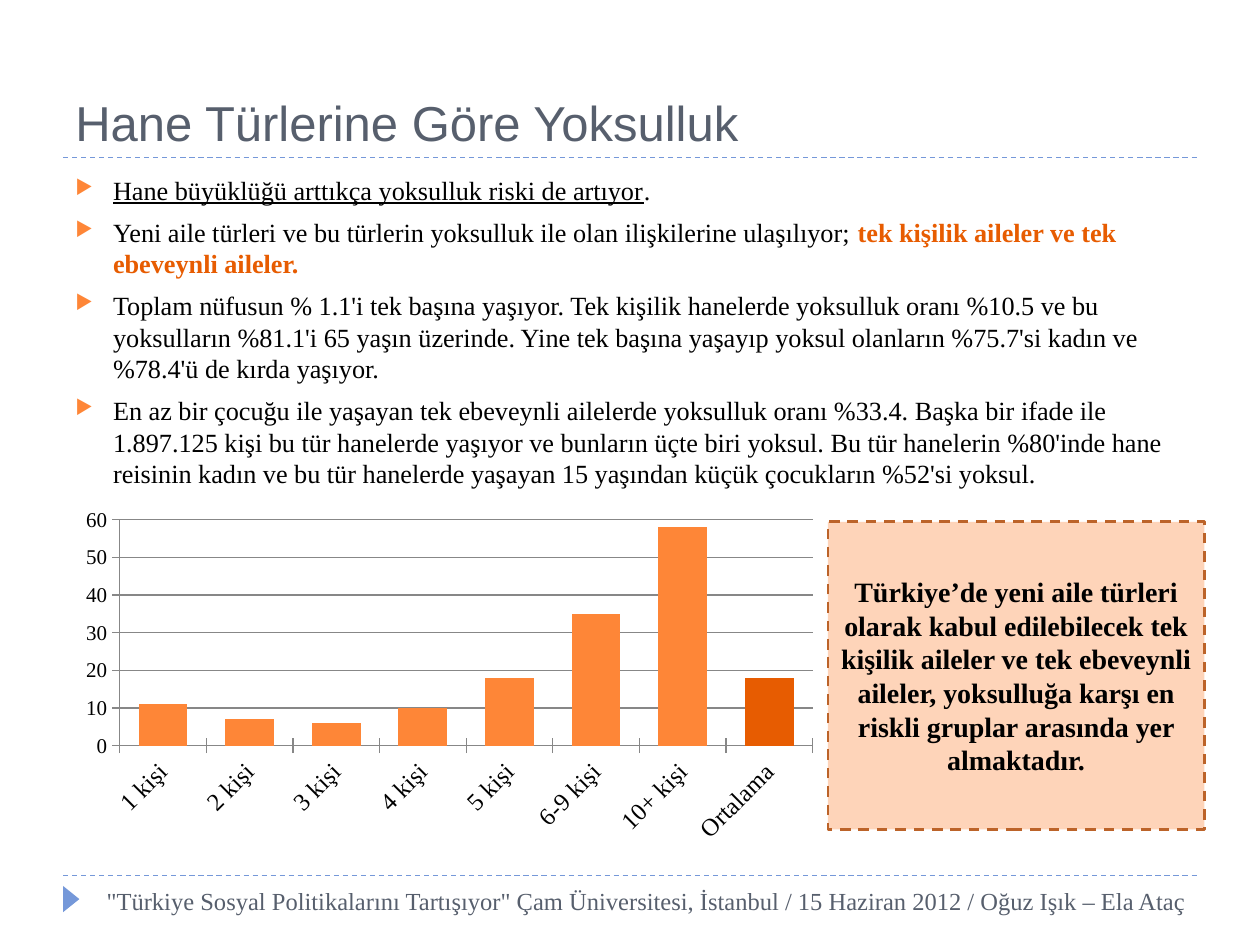
from dataclasses import dataclass
from typing import Any, NamedTuple

from lxml.etree import SubElement
from pptx import Presentation
from pptx.chart.data import CategoryChartData
from pptx.dml.color import RGBColor
from pptx.enum.chart import XL_CHART_TYPE as ChartType, XL_TICK_MARK as TickMark
from pptx.enum.dml import MSO_LINE
from pptx.enum.shapes import MSO_CONNECTOR as Connector, MSO_SHAPE as Preset
from pptx.enum.text import MSO_ANCHOR as Anchor, PP_ALIGN as Align
from pptx.oxml.ns import qn
from pptx.util import Cm, Pt


@dataclass(frozen=True)
class Theme:
    blue: str = "7598D9"
    slate: str = "575F6D"
    orange: str = "FE8637"
    dark_orange: str = "E75C01"
    brown: str = "BC6329"
    grid: str = "878787"
    ink: str = "000000"
    serif: str = "Times New Roman"
    sans: str = "Arial"
    title_size: float = 28
    body_size: float = 15
    callout_size: float = 16
    label_size: float = 14
    value_size: float = 12


class Box(NamedTuple):
    left: float
    top: float
    width: float
    height: float

    def lengths(self) -> list:
        return [Cm(value) for value in self]


class Span(NamedTuple):
    text: str
    style: dict = {}


THEME = Theme()
RULE_HEIGHTS = (3.18, 17.65)
SERIF = {"name": THEME.serif, "color": THEME.ink}
BODY = SERIF | {"size": Pt(THEME.body_size)}

BULLETS = [
    [Span("Hane büyüklüğü arttıkça yoksulluk riski de artıyor", {"underline": True}), Span(".")],
    [Span("Yeni aile türleri ve bu türlerin yoksulluk ile olan ilişkilerine ulaşılıyor; "),
     Span("tek kişilik aileler ve tek ebeveynli aileler.",
          {"bold": True, "color": THEME.dark_orange})],
    [Span("Toplam nüfusun % 1.1'i tek başına yaşıyor. Tek kişilik hanelerde yoksulluk oranı "
          "%10.5 ve bu yoksulların %81.1'i 65 yaşın üzerinde. Yine tek başına yaşayıp yoksul "
          "olanların %75.7'si kadın ve %78.4'ü de kırda yaşıyor.")],
    [Span("En az bir çocuğu ile yaşayan tek ebeveynli ailelerde yoksulluk oranı %33.4. Başka "
          "bir ifade ile 1.897.125 kişi bu tür hanelerde yaşıyor ve bunların üçte biri yoksul. "
          "Bu tür hanelerin %80'inde hane reisinin kadın ve bu tür hanelerde yaşayan 15 "
          "yaşından küçük çocukların %52'si yoksul.")],
]
CALLOUT = ("Türkiye’de yeni aile türleri olarak kabul edilebilecek tek kişilik aileler ve tek "
           "ebeveynli aileler, yoksulluğa karşı en riskli gruplar arasında yer almaktadır.")
FOOTER = ('"Türkiye Sosyal Politikalarını Tartışıyor" Çam Üniversitesi, İstanbul / '
          "15 Haziran 2012 / Oğuz Işık – Ela Ataç")
POVERTY_RATES = {"1 kişi": 11, "2 kişi": 7, "3 kişi": 6, "4 kişi": 10, "5 kişi": 18,
                 "6-9 kişi": 35, "10+ kişi": 58, "Ortalama": 18}


def assign(target: Any, values: dict) -> None:
    for name, value in values.items():
        setattr(target, name, value)


def style_font(font: Any, style: dict) -> None:
    assign(font, {name: value for name, value in style.items() if name != "color"})
    if "color" in style:
        font.color.rgb = RGBColor.from_string(style["color"])


def style_line(line: Any, color: str, width: float, dash: Any = None) -> None:
    line.color.rgb = RGBColor.from_string(color)
    assign(line, {"width": Pt(width), "dash_style": dash})


def paint(fill: Any, color: str) -> None:
    fill.solid()
    fill.fore_color.rgb = RGBColor.from_string(color)


def write(paragraph: Any, spans: list[Span], base: dict) -> None:
    for span in spans:
        run = paragraph.add_run()
        run.text = span.text
        style_font(run.font, base | span.style)


def add_text(slide: Any, box: Box, anchor: Any = Anchor.TOP) -> Any:
    frame = slide.shapes.add_textbox(*box.lengths()).text_frame
    assign(frame, {"word_wrap": True, "vertical_anchor": anchor})
    return frame


def add_rule(slide: Any, height: float) -> None:
    rule = slide.shapes.add_connector(
        Connector.STRAIGHT, Cm(1.27), Cm(height), Cm(24.13), Cm(height))
    style_line(rule.line, THEME.blue, 0.75, MSO_LINE.DASH)
    SubElement(rule._element.spPr, qn("a:effectLst"))


def add_shape(slide: Any, preset: Any, box: Box, color: str) -> Any:
    shape = slide.shapes.add_shape(preset, *box.lengths())
    shape.shadow.inherit = False
    paint(shape.fill, color)
    return shape


def add_bullet(paragraph: Any) -> None:
    paragraph.space_before = Pt(6)
    properties = paragraph._p.get_or_add_pPr()
    properties.set("marL", str(Cm(0.76)))
    properties.set("indent", str(Cm(-0.76)))
    color = SubElement(properties, qn("a:buClr"))
    SubElement(color, qn("a:srgbClr"), val=THEME.orange)
    SubElement(properties, qn("a:buSzPct"), val="76000")
    SubElement(properties, qn("a:buChar"), char="▶")


def add_bullets(slide: Any) -> None:
    frame = add_text(slide, Box(1.27, 3.38, 22.86, 7.14))
    for index, spans in enumerate(BULLETS):
        paragraph = frame.add_paragraph() if index else frame.paragraphs[0]
        add_bullet(paragraph)
        write(paragraph, spans, BODY)


def fix_plot_area(chart: Any, layout: dict[str, float]) -> None:
    """Place the inner plot area by fractions of the chart."""
    plot_area = chart._chartSpace.chart.plotArea
    holder = plot_area.find(qn("c:layout"))
    if holder is None:
        holder = plot_area.makeelement(qn("c:layout"))
        plot_area.insert(0, holder)
    manual = SubElement(holder, qn("c:manualLayout"))
    settings = {"layoutTarget": "inner", "xMode": "edge", "yMode": "edge"} | layout
    for name, value in settings.items():
        SubElement(manual, qn(f"c:{name}"), val=str(value))


def add_poverty_chart(slide: Any) -> None:
    data = CategoryChartData(number_format="0")
    data.categories = list(POVERTY_RATES)
    data.add_series("Yoksulluk oranı", list(POVERTY_RATES.values()))
    chart = slide.shapes.add_chart(
        ChartType.COLUMN_CLUSTERED, *Box(1.5, 10.13, 15.19, 7.01).lengths(), data).chart
    assign(chart, {"has_legend": False, "has_title": False})
    style_font(chart.font, SERIF | {"size": Pt(10)})
    fix_plot_area(chart, {"x": 0.06, "y": 0.05, "w": 0.92, "h": 0.65})

    plot = chart.plots[0]
    assign(plot, {"gap_width": 78, "vary_by_categories": False})
    paint(plot.series[0].format.fill, THEME.orange)
    paint(plot.series[0].points[len(POVERTY_RATES) - 1].format.fill, THEME.dark_orange)

    households, rates = chart.category_axis, chart.value_axis
    for axis, size in ((households, THEME.label_size), (rates, THEME.value_size)):
        axis.major_tick_mark = TickMark.CROSS
        style_font(axis.tick_labels.font, SERIF | {"size": Pt(size)})
        style_line(axis.format.line, THEME.grid, 0.75)
    assign(rates, {"minimum_scale": 0, "maximum_scale": 60, "major_unit": 10,
                   "has_major_gridlines": True})
    style_line(rates.major_gridlines.format.line, THEME.grid, 0.75)
    label_body = households._element.find(qn("c:txPr")).find(qn("a:bodyPr"))
    label_body.set("rot", str(-45 * 60000))


def add_callout(slide: Any) -> None:
    callout = add_shape(slide, Preset.RECTANGLE, Box(16.69, 10.52, 7.59, 6.2), THEME.orange)
    tint = callout._element.spPr.find(qn("a:solidFill")).find(qn("a:srgbClr"))
    SubElement(tint, qn("a:alpha"), val="35000")
    style_line(callout.line, THEME.brown, 1.5, MSO_LINE.DASH)
    frame = callout.text_frame
    assign(frame, {"word_wrap": True, "vertical_anchor": Anchor.MIDDLE})
    frame.paragraphs[0].alignment = Align.CENTER
    write(frame.paragraphs[0], [Span(CALLOUT)],
          SERIF | {"size": Pt(THEME.callout_size), "bold": True})


def main() -> None:
    deck = Presentation()
    assign(deck, {"slide_width": Cm(25.4), "slide_height": Cm(19.05)})
    slide = deck.slides.add_slide(deck.slide_layouts[6])
    for height in RULE_HEIGHTS:
        add_rule(slide, height)
    marker = add_shape(slide, Preset.ISOSCELES_TRIANGLE, Box(1.17, 17.96, 0.53, 0.33), THEME.blue)
    marker.rotation = 90
    marker.line.fill.background()

    add_bullets(slide)
    footer = add_text(slide, Box(1.9, 17.73, 22.4, 1.02))
    write(footer.paragraphs[0], [Span(FOOTER)],
          {"name": THEME.serif, "size": Pt(THEME.label_size), "color": THEME.slate})
    title = add_text(slide, Box(1.27, 0.43, 22.86, 2.74), Anchor.BOTTOM)
    write(title.paragraphs[0], [Span("Hane Türlerine Göre Yoksulluk")],
          {"name": THEME.sans, "size": Pt(THEME.title_size), "color": THEME.slate})
    add_poverty_chart(slide)
    add_callout(slide)
    deck.save("out.pptx")


if __name__ == "__main__":
    main()
